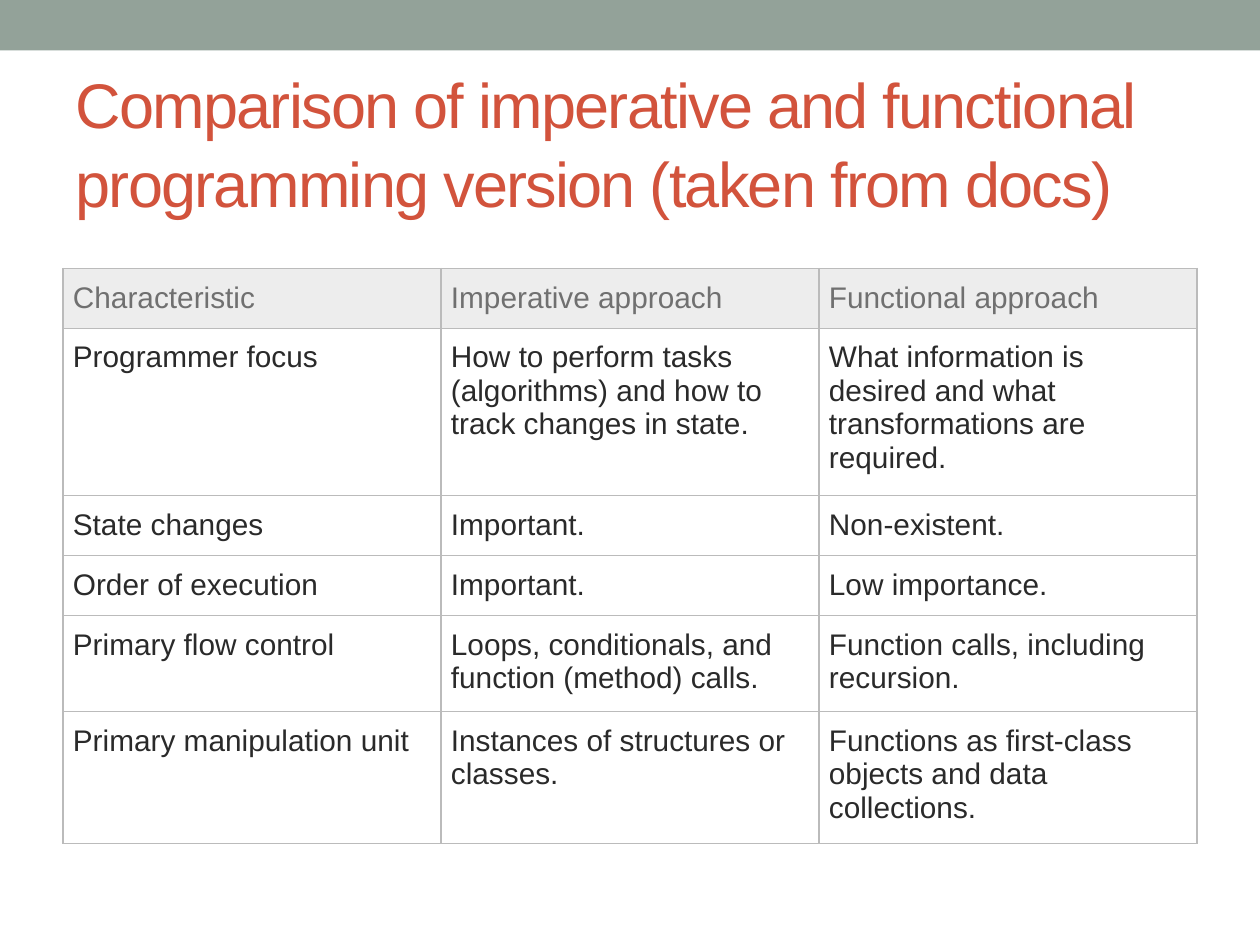
from dataclasses import dataclass

from lxml import etree
from pptx import Presentation
from pptx import util as u
from pptx.dml.color import RGBColor
from pptx.enum import shapes, text
from pptx.oxml import ns


@dataclass(frozen=True)
class Theme:
    font: str = "Arial"
    band: str = "93A299"
    title: str = "D2533C"
    header_fill: str = "EDEDED"
    header_text: str = "707070"
    body_text: str = "2A2A2A"
    border: str = "BBBBBB"
    title_size: int = 36
    table_size: int = 17
    title_tracking: int = -100
    border_width: float = 0.75


@dataclass(frozen=True)
class Comparison:
    characteristic: str
    imperative: str
    functional: str
    height: float

    @property
    def entries(self) -> tuple[str, str, str]:
        return self.characteristic, self.imperative, self.functional


THEME = Theme()
HEADING = "Comparison of imperative and functional programming version (taken from docs)"
COMPARISONS = [
    Comparison("Characteristic", "Imperative approach", "Functional approach", 1.21),
    Comparison(
        "Programmer focus",
        "How to perform tasks (algorithms) and how to track changes in state.",
        "What information is desired and what transformations are required.",
        3.37,
    ),
    Comparison("State changes", "Important.", "Non-existent.", 1.21),
    Comparison("Order of execution", "Important.", "Low importance.", 1.21),
    Comparison(
        "Primary flow control",
        "Loops, conditionals, and function (method) calls.",
        "Function calls, including recursion.",
        1.94,
    ),
    Comparison(
        "Primary manipulation unit",
        "Instances of structures or classes.",
        "Functions as first-class objects and data collections.",
        2.65,
    ),
]
SLIDE_WIDTH, SLIDE_HEIGHT = 25.4, 19.05
MARGIN = 1.27
CONTENT_WIDTH = SLIDE_WIDTH - 2 * MARGIN
COLUMN_WIDTH = CONTENT_WIDTH / 3


def style_text(frame, size: int, color: str) -> None:
    for paragraph in frame.paragraphs:
        paragraph.alignment = text.PP_ALIGN.LEFT
        for run in paragraph.runs:
            run.font.name = THEME.font
            run.font.size = u.Pt(size)
            run.font.bold = False
            run.font.color.rgb = RGBColor.from_string(color)


def add_band(slide) -> None:
    band = slide.shapes.add_shape(
        shapes.MSO_SHAPE.RECTANGLE, 0, 0, u.Cm(SLIDE_WIDTH), u.Cm(1.02)
    )
    band.shadow.inherit = False
    band.fill.solid()
    band.fill.fore_color.rgb = RGBColor.from_string(THEME.band)
    band.line.fill.background()


def add_heading(slide) -> None:
    heading = slide.shapes.title
    heading.left, heading.top = u.Cm(MARGIN), u.Cm(1.47)
    heading.width, heading.height = u.Cm(CONTENT_WIDTH), u.Cm(2.74)
    frame = heading.text_frame
    frame.text = HEADING
    frame.word_wrap = True
    frame.auto_size = text.MSO_AUTO_SIZE.NONE
    frame.vertical_anchor = text.MSO_ANCHOR.MIDDLE
    style_text(frame, THEME.title_size, THEME.title)
    paragraph = frame.paragraphs[0]
    paragraph.line_spacing = 1.05
    for run in paragraph.runs:
        run.font._element.set("spc", str(THEME.title_tracking))


def add_borders(cell) -> None:
    properties = cell._tc.get_or_add_tcPr()
    for side in ("lnL", "lnR", "lnT", "lnB"):
        border = etree.SubElement(
            properties, ns.qn(f"a:{side}"), w=str(u.Pt(THEME.border_width))
        )
        fill = etree.SubElement(border, ns.qn("a:solidFill"))
        etree.SubElement(fill, ns.qn("a:srgbClr"), val=THEME.border)


def fill_cell(cell, entry: str, is_header: bool) -> None:
    cell.text_frame.text = entry
    cell.margin_left = cell.margin_right = u.Cm(0.2)
    cell.margin_top = cell.margin_bottom = u.Cm(0.25)
    add_borders(cell)
    if is_header:
        cell.vertical_anchor = text.MSO_ANCHOR.MIDDLE
        cell.fill.solid()
        cell.fill.fore_color.rgb = RGBColor.from_string(THEME.header_fill)
    else:
        cell.vertical_anchor = text.MSO_ANCHOR.TOP
        cell.fill.background()
    color = THEME.header_text if is_header else THEME.body_text
    style_text(cell.text_frame, THEME.table_size, color)


def add_comparison_table(slide, comparisons: list[Comparison]) -> None:
    table = slide.shapes.add_table(
        len(comparisons),
        3,
        u.Cm(MARGIN),
        u.Cm(5.41),
        u.Cm(CONTENT_WIDTH),
        u.Cm(sum(comparison.height for comparison in comparisons)),
    ).table
    table.horz_banding = False
    for column in table.columns:
        column.width = u.Cm(COLUMN_WIDTH)
    for row, comparison in enumerate(comparisons):
        table.rows[row].height = u.Cm(comparison.height)
        for column, entry in enumerate(comparison.entries):
            fill_cell(table.cell(row, column), entry, row == 0)


def main() -> None:
    presentation = Presentation()
    presentation.slide_width = u.Cm(SLIDE_WIDTH)
    presentation.slide_height = u.Cm(SLIDE_HEIGHT)
    slide = presentation.slides.add_slide(presentation.slide_layouts[5])
    add_band(slide)
    add_heading(slide)
    add_comparison_table(slide, COMPARISONS)
    presentation.save("out.pptx")


if __name__ == "__main__":
    main()
